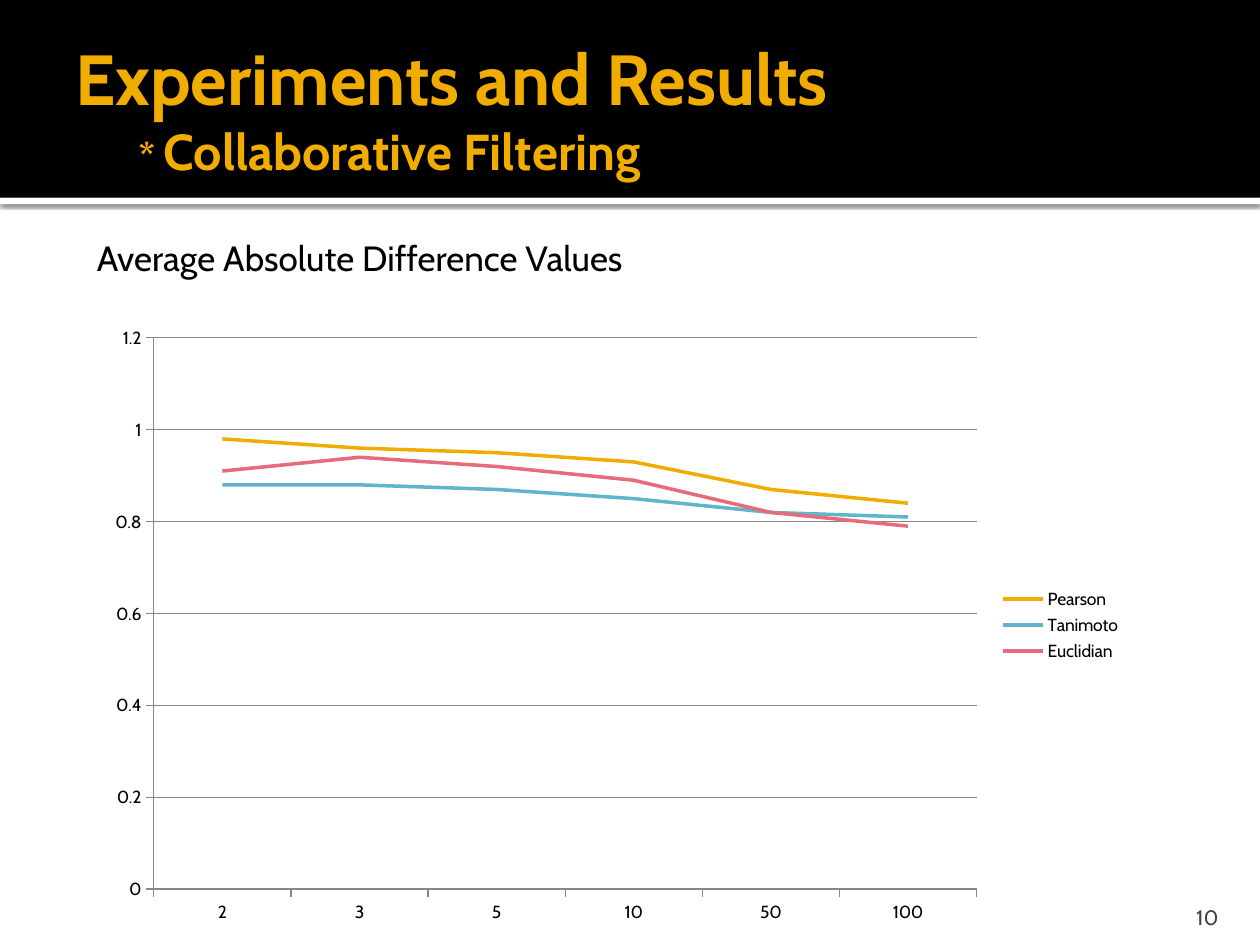
from dataclasses import dataclass, field
from typing import Any

from lxml import etree
from pptx import Presentation
from pptx.chart.data import CategoryChartData
from pptx.dml.color import RGBColor
from pptx.enum.chart import XL_CHART_TYPE, XL_LEGEND_POSITION, XL_TICK_MARK
from pptx.enum.shapes import MSO_SHAPE
from pptx.enum.text import MSO_ANCHOR, MSO_AUTO_SIZE, PP_ALIGN
from pptx.oxml.ns import qn
from pptx.util import Inches, Pt

RECTANGLE = MSO_SHAPE.RECTANGLE
LINE = XL_CHART_TYPE.LINE
LEGEND_RIGHT = XL_LEGEND_POSITION.RIGHT
TICK_OUT, TICK_NONE = XL_TICK_MARK.OUTSIDE, XL_TICK_MARK.NONE
TOP, MIDDLE, BOTTOM = MSO_ANCHOR.TOP, MSO_ANCHOR.MIDDLE, MSO_ANCHOR.BOTTOM
GROW = MSO_AUTO_SIZE.SHAPE_TO_FIT_TEXT
LEFT, RIGHT = PP_ALIGN.LEFT, PP_ALIGN.RIGHT

WIDTH, HEIGHT = Inches(10), Inches(7.5)
COLUMNS, ROWS = 100, 75
FONT = "Cabin"
BLACK, WHITE, GOLD, GREY = "000000", "FFFFFF", "F0AD00", "454545"
AXIS_GREY = "878787"


@dataclass(frozen=True)
class Box:
    """A place on the slide in grid columns and rows."""
    column: float
    row: float
    columns: float
    rows: float

    def place(self) -> tuple[int, int, int, int]:
        """Return left, top, width and height in slide units."""
        across, down = WIDTH / COLUMNS, HEIGHT / ROWS
        return (round(self.column * across), round(self.row * down),
                round(self.columns * across), round(self.rows * down))


@dataclass(frozen=True)
class Phrase:
    """A piece of text with its own size."""
    text: str
    size: float


@dataclass(frozen=True)
class Label:
    """A text box whose lines are lists of phrases."""
    box: Box
    lines: list[list[Phrase]]
    color: str
    bold: bool = False
    align: PP_ALIGN = LEFT
    frame: dict[str, Any] = field(default_factory=dict)


@dataclass(frozen=True)
class Measure:
    """One similarity measure and its differences."""
    name: str
    color: str
    differences: tuple[float, ...]


HEADER = Box(0, 0, 100, 15.7)
RULE = Box(0, 15.7, 100, 0.5)
CHART = Box(7.5, 25, 82.5, 49.2)
LABELS = [
    Label(Box(5, 1.7, 90, 13.7),
          [[Phrase("Experiments and Results", 40.5)],
           [Phrase("\t* ", 21.6), Phrase("Collaborative Filtering", 28.8)]],
          GOLD, bold=True,
          frame={"vertical_anchor": MIDDLE, "margin_right": Inches(0.05)}),
    Label(Box(89.7, 70.8, 8, 3), [[Phrase("10", 12)]], GREY, align=RIGHT,
          frame={"vertical_anchor": BOTTOM, "margin_bottom": 0}),
    Label(Box(6.7, 18.3, 85, 4.4),
          [[Phrase("Average Absolute Difference Values", 20)]], BLACK,
          frame={"vertical_anchor": TOP, "auto_size": GROW}),
]
NEIGHBOURS = ("2", "3", "5", "10", "50", "100")
MEASURES = [
    Measure("Pearson", GOLD, (0.98, 0.96, 0.95, 0.93, 0.87, 0.84)),
    Measure("Tanimoto", "60B5CC", (0.88, 0.88, 0.87, 0.85, 0.82, 0.81)),
    Measure("Euclidian", "E66C7D", (0.91, 0.94, 0.92, 0.89, 0.82, 0.79)),
]


def rgb(color: str) -> RGBColor:
    """Turn a hex string into a colour."""
    return RGBColor.from_string(color)


def apply_format(target: Any, values: dict[str, Any]) -> None:
    """Set every named attribute on the target."""
    for name, value in values.items():
        setattr(target, name, value)


def apply_line(line: Any, color: str, width: float) -> None:
    """Give a line its colour and width in points."""
    line.color.rgb = rgb(color)
    line.width = Pt(width)


def add_band(slide: Any, box: Box, color: str) -> Any:
    """Draw a plain filled band."""
    band = slide.shapes.add_shape(RECTANGLE, *box.place())
    band.shadow.inherit = False
    band.fill.solid()
    band.fill.fore_color.rgb = rgb(color)
    band.line.fill.background()
    return band


def add_shadow(band: Any) -> None:
    """Drop a soft black shadow below a band."""
    effects = band._element.spPr.find(qn("a:effectLst"))
    shadow = etree.SubElement(effects, qn("a:outerShdw"), blurRad=str(Pt(2.5)),
                              dist=str(Pt(0.8)), dir="5400000", rotWithShape="0")
    tint = etree.SubElement(shadow, qn("a:srgbClr"), val=BLACK)
    etree.SubElement(tint, qn("a:alpha"), val="60000")


def add_label(slide: Any, label: Label) -> None:
    """Write a label with its lines in one paragraph."""
    frame = slide.shapes.add_textbox(*label.box.place()).text_frame
    apply_format(frame, {"word_wrap": True, **label.frame})
    paragraph = frame.paragraphs[0]
    paragraph.alignment = label.align
    for index, line in enumerate(label.lines):
        if index:
            paragraph.add_line_break()
        for phrase in line:
            run = paragraph.add_run()
            run.text = phrase.text
            apply_format(run.font, {"name": FONT, "size": Pt(phrase.size), "bold": label.bold})
            run.font.color.rgb = rgb(label.color)


def add_difference_chart(slide: Any, box: Box) -> None:
    """Plot the differences of all measures."""
    chart_data = CategoryChartData()
    chart_data.categories = NEIGHBOURS
    for measure in MEASURES:
        chart_data.add_series(measure.name, measure.differences)
    chart = slide.shapes.add_chart(LINE, *box.place(), chart_data).chart
    apply_format(chart, {"has_title": False, "has_legend": True})
    apply_format(chart.font, {"name": FONT, "size": Pt(10)})
    chart.font.color.rgb = rgb(BLACK)
    apply_format(chart.legend, {"position": LEGEND_RIGHT, "include_in_layout": False})
    apply_format(chart.value_axis, {"minimum_scale": 0, "maximum_scale": 1.2,
                                    "major_unit": 0.2, "has_major_gridlines": True})
    apply_format(chart.value_axis.tick_labels,
                 {"number_format": "General", "number_format_is_linked": False})
    for axis in (chart.category_axis, chart.value_axis):
        apply_format(axis, {"major_tick_mark": TICK_OUT, "minor_tick_mark": TICK_NONE})
        apply_line(axis.format.line, AXIS_GREY, 0.75)
    apply_line(chart.value_axis.major_gridlines.format.line, AXIS_GREY, 0.75)
    chart.plots[0].vary_by_categories = False
    for series, measure in zip(chart.plots[0].series, MEASURES):
        series.smooth = False
        apply_line(series.format.line, measure.color, 2)


def main() -> None:
    """Build the slide and save it."""
    presentation = Presentation()
    apply_format(presentation, {"slide_width": WIDTH, "slide_height": HEIGHT})
    slide = presentation.slides.add_slide(presentation.slide_layouts[6])
    add_shadow(add_band(slide, RULE, WHITE))
    add_band(slide, HEADER, BLACK)
    add_difference_chart(slide, CHART)
    for label in LABELS:
        add_label(slide, label)
    presentation.save("out.pptx")


if __name__ == "__main__":
    main()
